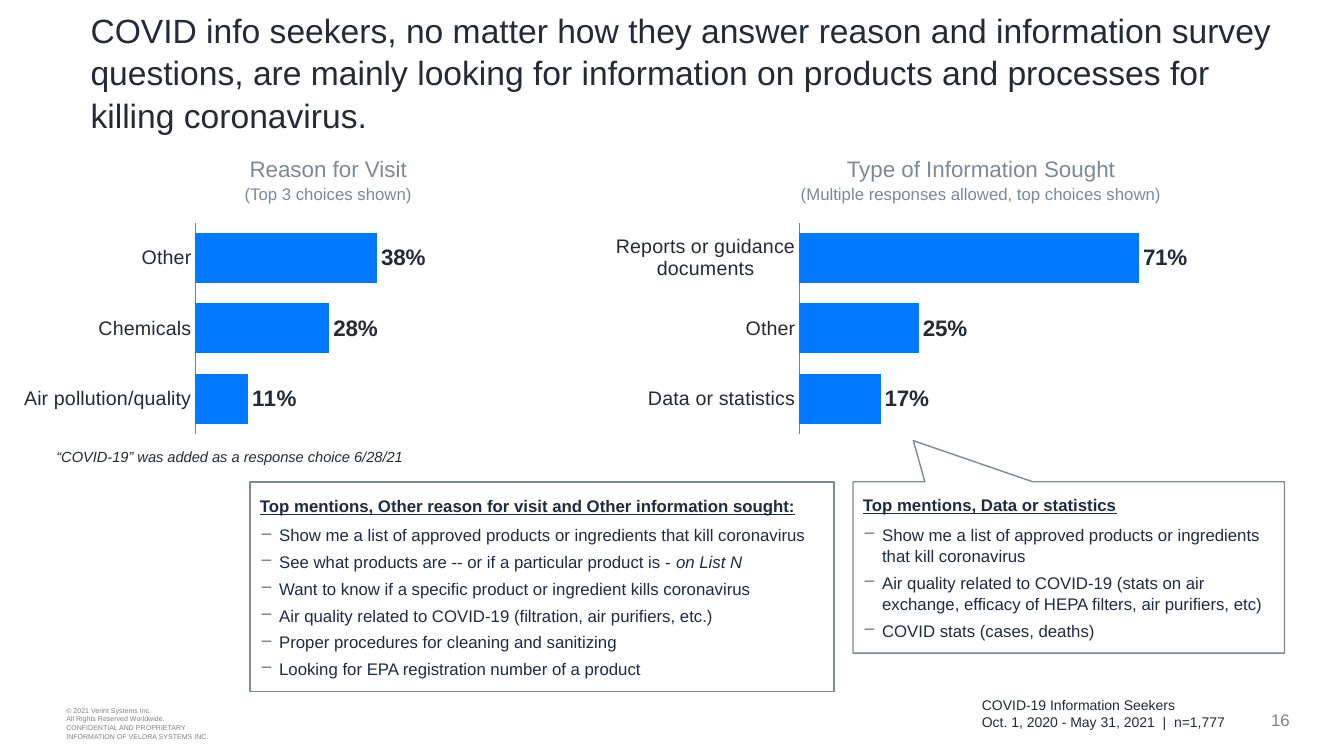
from dataclasses import dataclass
from lxml.etree import SubElement
from pptx import Presentation
from pptx.chart.data import CategoryChartData
from pptx.dml.color import RGBColor
from pptx.enum.chart import XL_CHART_TYPE as ChartType, XL_LABEL_POSITION as LabelPosition
from pptx.enum.chart import XL_TICK_LABEL_POSITION as TickLabels, XL_TICK_MARK as TickMark
from pptx.enum.shapes import MSO_SHAPE as Shape
from pptx.enum.text import MSO_ANCHOR as Anchor, PP_ALIGN as Align
from pptx.oxml import parse_xml
from pptx.oxml.ns import nsdecls, qn
from pptx.slide import Slide
from pptx.text.text import Font, TextFrame
from pptx.util import Inches, Pt


@dataclass(frozen=True)
class Theme:
    font: str = "Arial"
    ink: str = "262A32"
    callout_ink: str = "222B3C"
    muted: str = "7F8991"
    gray: str = "808080"
    bar: str = "0079FF"
    paper: str = "FFFFFF"
    title: float = 24
    heading: float = 16
    category: float = 14
    body: float = 12
    note: float = 10.5
    footer: float = 10
    legal: float = 5
    line_spacing: float = 1.05


THEME = Theme()


@dataclass(frozen=True)
class Box:
    left: float
    top: float
    width: float
    height: float

    def lengths(self) -> tuple:
        return tuple(Inches(n) for n in (self.left, self.top, self.width, self.height))


@dataclass(frozen=True)
class SurveyChart:
    box: Box
    heading_box: Box
    heading: str
    subheading: str
    shares: dict[str, float]


@dataclass(frozen=True)
class Callout:
    box: Box
    tip: tuple[float, float]
    heading: str
    bullets: tuple[str, ...]
    last_space: float


SURVEY_CHARTS = (
    SurveyChart(Box(0.02, 2.19, 6.19, 2.18), Box(0.8, 1.48, 4.91, 0.57),
                "Reason for Visit", "(Top 3 choices shown)",
                {"Other": 0.38, "Chemicals": 0.28, "Air pollution/quality": 0.11}),
    SurveyChart(Box(6.01, 2.19, 6.19, 2.18), Box(7.41, 1.48, 4.64, 0.84),
                "Type of Information Sought", "(Multiple responses allowed, top choices shown)",
                {"Reports or guidance documents": 0.71, "Other": 0.25, "Data or statistics": 0.17}),
)

ITALIC_ENDING = "on List N"
CALLOUTS = (
    Callout(Box(2.48, 4.78, 5.79, 2.08), (-0.09, -0.5),
            "Top mentions, Other reason for visit and Other information sought:",
            ("Show me a list of approved products or ingredients that kill coronavirus",
             "See what products are -- or if a particular product is - on List N",
             "Want to know if a specific product or ingredient kills coronavirus",
             "Air quality related to COVID-19 (filtration, air purifiers, etc.)",
             "Proper procedures for cleaning and sanitizing",
             "Looking for EPA registration number of a product"), 0),
    Callout(Box(8.46, 4.78, 4.28, 1.7), (-0.36, -0.74),
            "Top mentions, Data or statistics",
            ("Show me a list of approved products or ingredients that kill coronavirus",
             "Air quality related to COVID-19 (stats on air exchange, efficacy of HEPA filters, "
             "air purifiers, etc)",
             "COVID stats (cases, deaths)"), 2),
)


def rgb(color: str) -> RGBColor:
    return RGBColor.from_string(color)


def format_font(font: Font, size: float, color: str, bold: bool = False) -> None:
    font.name, font.size, font.bold = THEME.font, Pt(size), bold
    font.color.rgb = rgb(color)


def write_text(frame: TextFrame, text: str, *, size: float, color: str = THEME.ink,
               align: Align = Align.LEFT, bold: bool = False, underline: bool = False,
               italic: bool = False, bullet: bool = False, space_after: float = 0) -> None:
    """Add one paragraph, filling the empty first one if there is one."""
    paragraph = frame.paragraphs[0]
    if paragraph.runs:
        paragraph = frame.add_paragraph()
    if bullet:
        properties = paragraph._p.get_or_add_pPr()
        properties.set("marL", str(Inches(0.19)))
        properties.set("indent", str(-Inches(0.19)))
        SubElement(properties, qn("a:buChar")).set("char", "−")
    paragraph.alignment = align
    paragraph.line_spacing = THEME.line_spacing
    paragraph.space_after = Pt(space_after)
    parts = [(text, italic)]
    if text.endswith(ITALIC_ENDING):
        parts = [(text.removesuffix(ITALIC_ENDING), False), (ITALIC_ENDING, True)]
    for words, slanted in parts:
        run = paragraph.add_run()
        run.text = words
        format_font(run.font, size, color, bold)
        run.font.italic, run.font.underline = slanted, underline


def add_text_box(slide: Slide, box: Box, anchor: Anchor = Anchor.TOP) -> TextFrame:
    frame = slide.shapes.add_textbox(*box.lengths()).text_frame
    frame.word_wrap = True
    frame.vertical_anchor = anchor
    return frame


def add_survey_chart(slide: Slide, survey: SurveyChart) -> None:
    heading = add_text_box(slide, survey.heading_box)
    for text, size in ((survey.heading, THEME.heading), (survey.subheading, THEME.body)):
        write_text(heading, text, size=size, color=THEME.muted, align=Align.CENTER)

    data = CategoryChartData()
    data.categories = survey.shares.keys()
    data.add_series("Series 1", survey.shares.values())
    chart = slide.shapes.add_chart(ChartType.BAR_CLUSTERED, *survey.box.lengths(), data).chart
    chart.has_legend = chart.has_title = False
    format_font(chart.font, THEME.footer, THEME.bar)

    # Axes
    categories, values = chart.category_axis, chart.value_axis
    for axis in (categories, values):
        axis.major_tick_mark = axis.minor_tick_mark = TickMark.NONE
        axis.has_major_gridlines = False
    categories.reverse_order = True
    format_font(categories.tick_labels.font, THEME.category, THEME.ink)
    categories.format.line.color.rgb = rgb(THEME.gray)
    categories.format.line.width = Pt(0.75)
    values.minimum_scale, values.maximum_scale = 0, 0.9
    values.tick_label_position = TickLabels.NONE
    values.format.line.fill.background()

    # Bars and their labels
    plot = chart.plots[0]
    plot.gap_width = 41
    plot.vary_by_categories = False
    fill = plot.series[0].format.fill
    fill.solid()
    fill.fore_color.rgb = rgb(THEME.bar)
    plot.has_data_labels = True
    labels = plot.data_labels
    labels.show_value = True
    labels.number_format, labels.number_format_is_linked = "0%", False
    labels.position = LabelPosition.OUTSIDE_END
    format_font(labels.font, THEME.heading, THEME.ink, bold=True)

    # Fixed plot area inside the chart frame
    area = chart._chartSpace.chart.plotArea
    for layout in area.findall(qn("c:layout")):
        area.remove(layout)
    settings = {"layoutTarget": "inner", "xMode": "edge", "yMode": "edge",
                "x": 0.31, "y": 0.01, "w": 0.69, "h": 0.96}
    inner = "".join(f'<c:{name} val="{value}"/>' for name, value in settings.items())
    area.insert(0, parse_xml(
        f'<c:layout {nsdecls("c")}><c:manualLayout>{inner}</c:manualLayout></c:layout>'))


def add_callout(slide: Slide, callout: Callout) -> None:
    shape = slide.shapes.add_shape(Shape.RECTANGULAR_CALLOUT, *callout.box.lengths())
    shape.adjustments[0], shape.adjustments[1] = callout.tip
    shape.shadow.inherit = False
    shape.fill.solid()
    shape.fill.fore_color.rgb = rgb(THEME.paper)
    shape.line.color.rgb = rgb(THEME.muted)
    shape.line.width = Pt(1)
    frame = shape.text_frame
    frame.word_wrap = True
    frame.vertical_anchor = Anchor.MIDDLE
    write_text(frame, callout.heading, size=THEME.body, color=THEME.callout_ink,
               bold=True, underline=True, space_after=6)
    for bullet in callout.bullets:
        space = callout.last_space if bullet == callout.bullets[-1] else 4
        write_text(frame, bullet, size=THEME.body, color=THEME.callout_ink,
                   bullet=True, space_after=space)


def add_footer(slide: Slide) -> None:
    legal = add_text_box(slide, Box(0.56, 6.94, 2.4, 0.47), Anchor.MIDDLE)
    for text in ("© 2021 Verint Systems Inc.", "All Rights Reserved Worldwide.",
                 "CONFIDENTIAL AND PROPRIETARY", "INFORMATION OF VELORA SYSTEMS INC."):
        write_text(legal, text, size=THEME.legal, color=THEME.gray)
    sample = add_text_box(slide, Box(9.64, 6.84, 2.85, 0.47), Anchor.MIDDLE)
    sample.margin_top = sample.margin_bottom = 0
    for text in ("COVID-19 Information Seekers", "Oct. 1, 2020 - May 31, 2021  |  n=1,777"):
        write_text(sample, text, size=THEME.footer)
    number = add_text_box(slide, Box(12.2, 6.9, 0.69, 0.47), Anchor.MIDDLE)
    write_text(number, "16", size=THEME.body, color=THEME.gray, align=Align.RIGHT)


def main() -> None:
    presentation = Presentation()
    presentation.slide_width, presentation.slide_height = Inches(13.33), Inches(7.5)
    slide = presentation.slides.add_slide(presentation.slide_layouts[6])

    write_text(add_text_box(slide, Box(0.8, 0.03, 11.93, 1.31)),
               "COVID info seekers, no matter how they answer reason and information survey "
               "questions, are mainly looking for information on products and processes for "
               "killing coronavirus.", size=THEME.title)
    for survey in SURVEY_CHARTS:
        add_survey_chart(slide, survey)
    for callout in CALLOUTS:
        add_callout(slide, callout)
    write_text(add_text_box(slide, Box(0.07, 4.38, 4.42, 0.29)),
               "“COVID-19” was added as a response choice 6/28/21",
               size=THEME.note, align=Align.CENTER, italic=True)
    add_footer(slide)
    presentation.save("out.pptx")


if __name__ == "__main__":
    main()
